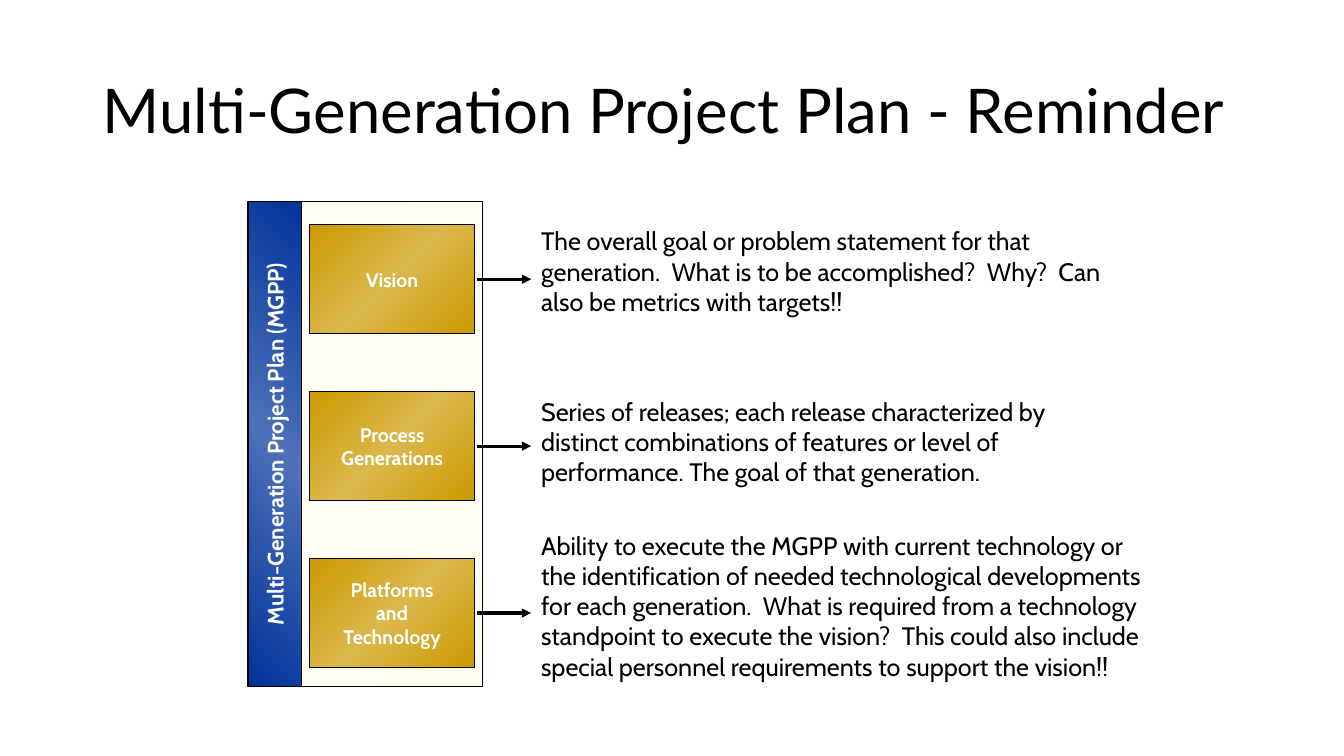
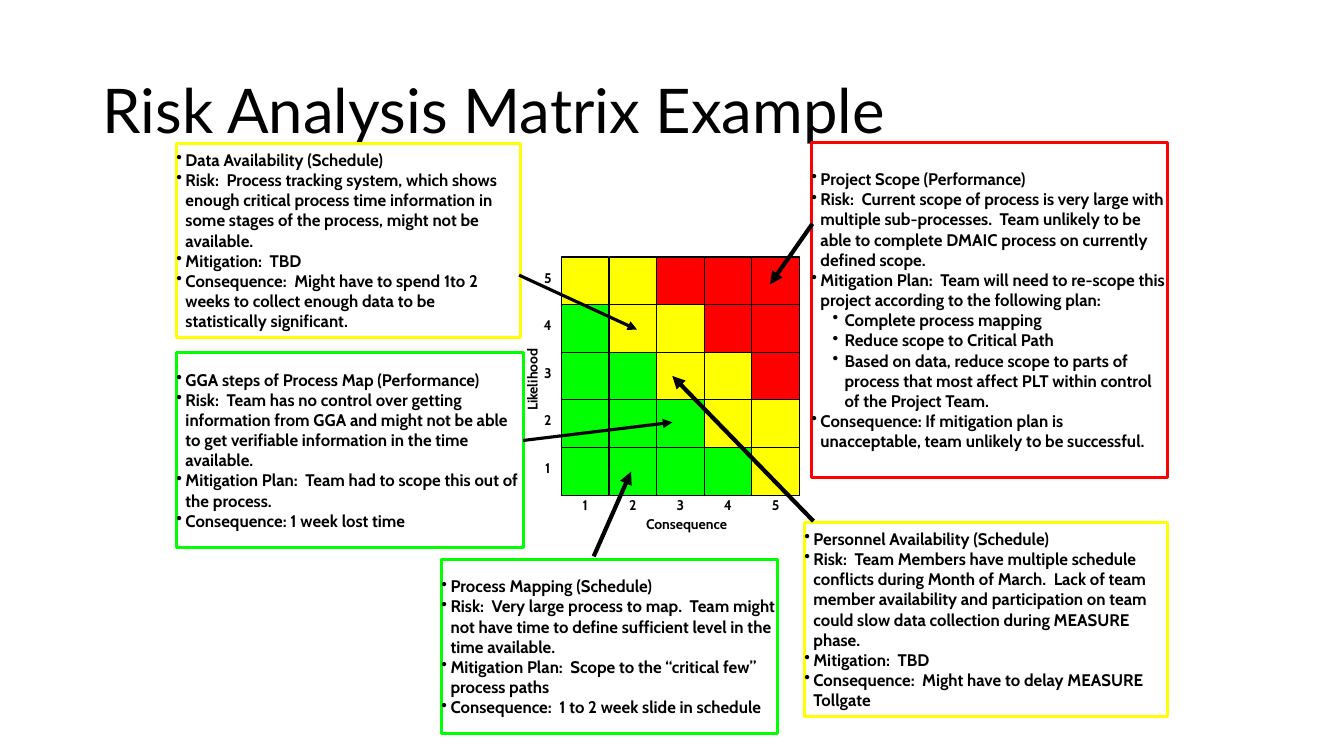
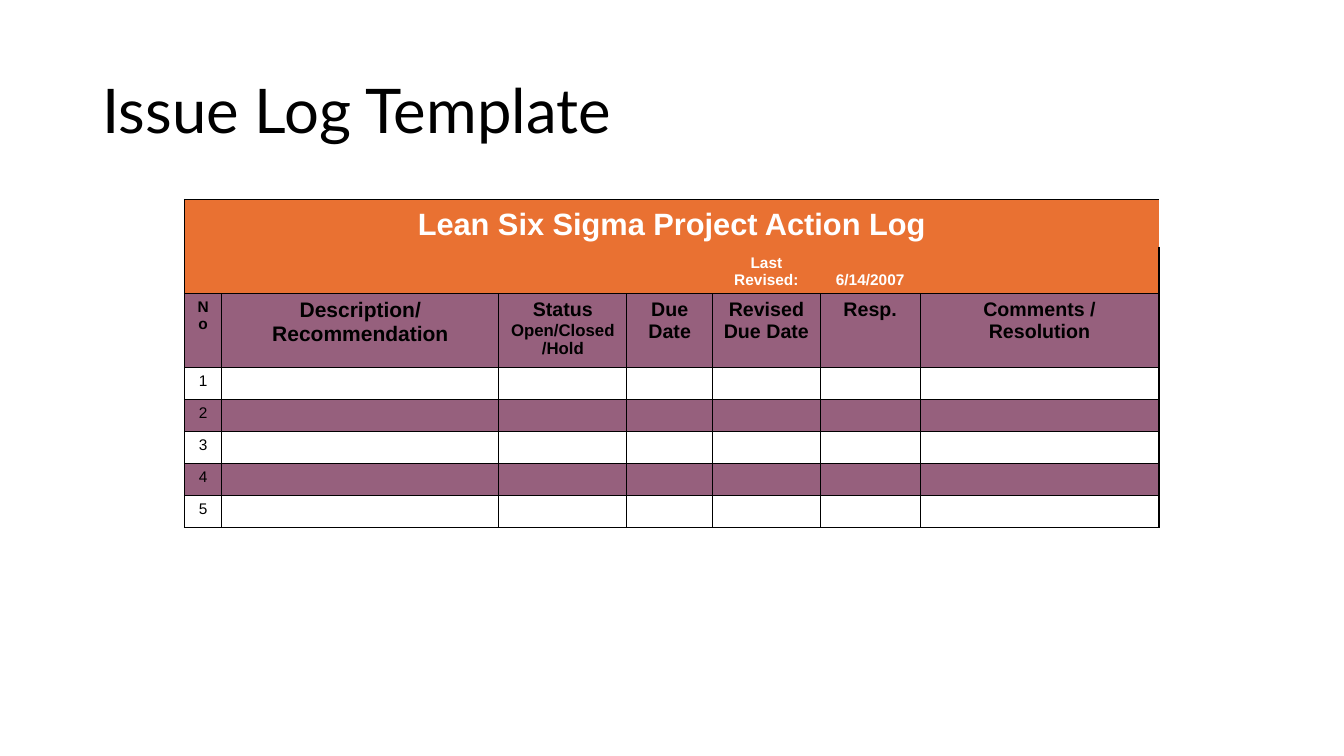
from dataclasses import dataclass, replace
from typing import Any, NamedTuple

from lxml.etree import SubElement
from pptx import Presentation
from pptx.dml.color import RGBColor
from pptx.enum.shapes import MSO_CONNECTOR, MSO_SHAPE
from pptx.enum.text import MSO_ANCHOR, PP_ALIGN
from pptx.oxml.ns import qn
from pptx.shapes.autoshape import Shape
from pptx.slide import Slide
from pptx.util import Emu, Inches, Pt

COLS, ROWS = 160, 90
WIDE, HIGH = Inches(13.333), Inches(7.5)


@dataclass(frozen=True)
class Style:
    """Look of a run of text."""
    size: float
    font: str = "Cabin"
    ink: str = "000000"
    bold: bool = False


@dataclass(frozen=True)
class Theme:
    """Colours and type sizes of the deck."""
    black: str = "000000"
    white: str = "FFFFFF"
    red: str = "FF0000"
    yellow: str = "FFFF00"
    green: str = "00FF00"
    orange: str = "E97132"
    plum: str = "96607D"
    cream: tuple[str, str] = ("FFFFEF", "FFFFF4")
    gold: tuple[str, str] = ("CC9900", "DBB84D")
    blue: tuple[str, str] = ("003399", "4D70B8")
    title: Style = Style(44, "Lato")
    body: Style = Style(18)
    card: Style = Style(14, ink="FFFFFF", bold=True)
    spine: Style = Style(16, ink="FFFFFF", bold=True)
    risk: Style = Style(12, bold=True)
    axis: Style = Style(10, bold=True)
    banner: Style = Style(22, "Arial", "FFFFFF", True)
    stamp: Style = Style(11, "Arial", "FFFFFF", True)
    head: Style = Style(14, "Arial", bold=True)
    count: Style = Style(11, "Arial")


THEME = Theme()


class Box(NamedTuple):
    """Area in grid columns and rows."""
    left: float
    top: float
    wide: float
    high: float


class Stage(NamedTuple):
    """Part of the plan with its meaning."""
    name: str
    note: str
    area: Box


class Item(NamedTuple):
    """Bullet line with its level."""
    text: str
    level: int = 0


class Risk(NamedTuple):
    """Framed risk and the arrow to its cell."""
    area: Box
    hue: str
    start: tuple[float, float]
    end: tuple[float, float]
    weight: float
    items: list[Item]


NOTE_LEFT = 63.24
STAGES = [
    Stage("Vision", "The overall goal or problem statement for that generation.  What is to be "
          "accomplished?  Why?  Can also be metrics with targets!!", Box(NOTE_LEFT, 26.28, 71.28, 12)),
    Stage("Process Generations", "Series of releases; each release characterized by distinct "
          "combinations of features or level of performance. The goal of that generation.",
          Box(NOTE_LEFT, 46.56, 69.96, 12)),
    Stage("Platforms\nand\nTechnology", "Ability to execute the MGPP with current technology or the "
          "identification of needed technological developments for each generation.  What is required "
          "from a technology standpoint to execute the vision?  This could also include special "
          "personnel requirements to support the vision!!", Box(NOTE_LEFT, 62.52, 75.84, 22.8)),
]
RISKS = [
    Risk(Box(52.56, 66.6, 39.96, 20.76), THEME.green, (70.68, 66.24), (75.12, 56.16), 3, [
        Item("Process Mapping (Schedule)"),
        Item("Risk:  Very large process to map.  Team might not have time to define sufficient "
             "level in the time available."),
        Item("Mitigation Plan:  Scope to the “critical few” process paths"),
        Item("Consequence:  1 to 2 week slide in schedule")]),
    Risk(Box(21, 17.04, 40.92, 23.16), THEME.yellow, (61.8, 32.76), (75.84, 39.24), 2.25, [
        Item("Data Availability (Schedule)"),
        Item("Risk:  Process tracking system, which shows enough critical process time information "
             "in some stages of the process, might not be available."),
        Item("Mitigation:  TBD"),
        Item("Consequence:  Might have to spend 1to 2 weeks to collect enough data to be "
             "statistically significant.")]),
    Risk(Box(95.76, 62.16, 43.2, 23.16), THEME.yellow, (96.84, 62.04), (80.04, 44.76), 3, [
        Item("Personnel Availability (Schedule)"),
        Item("Risk:  Team Members have multiple schedule conflicts during Month of March.  Lack of "
             "team member availability and participation on team could slow data collection during "
             "MEASURE phase."),
        Item("Mitigation:  TBD"),
        Item("Consequence:  Might have to delay MEASURE Tollgate")]),
    Risk(Box(21, 42, 41.28, 23.16), THEME.green, (62.28, 52.44), (80.04, 50.28), 2.25, [
        Item("GGA steps of Process Map (Performance)"),
        Item("Risk:  Team has no control over getting information from GGA and might not be able "
             "to get verifiable information in the time available."),
        Item("Mitigation Plan:  Team had to scope this out of the process."),
        Item("Consequence: 1 week lost time")]),
    Risk(Box(96.6, 16.92, 42.36, 39.96), THEME.red, (96.72, 26.64), (91.68, 33.84), 3, [
        Item("Project Scope (Performance)"),
        Item("Risk:  Current scope of process is very large with multiple sub-processes.  Team "
             "unlikely to be able to complete DMAIC process on currently defined scope."),
        Item("Mitigation Plan:  Team will need to re-scope this project according to the "
             "following plan:"),
        Item("Complete process mapping", 1),
        Item("Reduce scope to Critical Path", 1),
        Item("Based on data, reduce scope to parts of process that most affect PLT within control "
             "of the Project Team.", 1),
        Item("Consequence: If mitigation plan is unacceptable, team unlikely to be successful.")]),
]
HEAT = ["YYRRR", "GYYRR", "GGYYR", "GGGYY", "GGGGY"]
HUES = {"G": THEME.green, "Y": THEME.yellow, "R": THEME.red}
LOG_COLS = [4.44, 33, 15.24, 10.2, 12.84, 11.88, 28.44]
LOG_ROWS = [5.4, 5.14, 8.3] + [3.8] * 5
HEADS = [("No", 11), ("Description/ Recommendation", 15), ("Status ", 14), ("Due Date", 14),
         ("Revised Due Date", 14), ("Resp.", 14), ("Comments / Resolution", 14)]


def across(cols: float) -> Emu:
    """Turn grid columns into a length."""
    return Emu(round(cols * WIDE / COLS))


def down(rows: float) -> Emu:
    """Turn grid rows into a length."""
    return Emu(round(rows * HIGH / ROWS))


def place(box: Box) -> tuple[Emu, Emu, Emu, Emu]:
    """Turn a grid box into lengths."""
    return across(box.left), down(box.top), across(box.wide), down(box.high)


def apply(item: Any, values: dict[str, Any]) -> None:
    """Set each named attribute."""
    for name, value in values.items():
        setattr(item, name, value)


def write(para: Any, text: str, style: Style, **form: Any) -> None:
    """Add styled text to a paragraph."""
    apply(para, form)
    for index, line in enumerate(text.split("\n")):
        if index:
            para.add_line_break()
        run = para.add_run()
        run.text = line
        apply(run.font, {"size": Pt(style.size), "name": style.font, "bold": style.bold})
        run.font.color.rgb = RGBColor.from_string(style.ink)


def label(slide: Slide, box: Box, text: str, style: Style, anchor: Any = MSO_ANCHOR.TOP,
          wrap: bool = True, **form: Any) -> Shape:
    """Draw a text box."""
    shape = slide.shapes.add_textbox(*place(box))
    apply(shape.text_frame, {"word_wrap": wrap, "vertical_anchor": anchor})
    write(shape.text_frame.paragraphs[0], text, style, **form)
    return shape


def block(slide: Slide, box: Box, fill: str | tuple[str, str] | None = None,
          edge: str = THEME.black, weight: float = 1) -> Shape:
    """Draw a plain, shaded or hollow rectangle."""
    shape = slide.shapes.add_shape(MSO_SHAPE.RECTANGLE, *place(box))
    shape.shadow.inherit = False
    shape.line.color.rgb = RGBColor.from_string(edge)
    shape.line.width = Pt(weight)
    if isinstance(fill, str):
        shape.fill.solid()
        shape.fill.fore_color.rgb = RGBColor.from_string(fill)
        return shape
    shape.fill.background()
    if fill:
        shade(shape, *fill)
    return shape


def shade(shape: Shape, rim: str, core: str) -> None:
    """Give a shape a diagonal three-stop gradient."""
    props = shape._element.spPr
    grad = SubElement(props, qn("a:gradFill"), rotWithShape="1")
    stops = SubElement(grad, qn("a:gsLst"))
    for pos, hue in ((0, rim), (50000, core), (100000, rim)):
        stop = SubElement(stops, qn("a:gs"), pos=str(pos))
        SubElement(stop, qn("a:srgbClr"), val=hue)
    SubElement(grad, qn("a:lin"), ang="2700000", scaled="0")
    props.replace(props.find(qn("a:noFill")), grad)


def panel(slide: Slide, box: Box, fill: tuple[str, str], text: str, style: Style) -> Shape:
    """Draw a shaded block with centred text."""
    shape = block(slide, box, fill)
    inset = Inches(0.01)
    apply(shape.text_frame, {"word_wrap": True, "vertical_anchor": MSO_ANCHOR.MIDDLE,
                             "margin_left": inset, "margin_right": inset,
                             "margin_top": inset, "margin_bottom": inset})
    write(shape.text_frame.paragraphs[0], text, style, alignment=PP_ALIGN.CENTER)
    return shape


def arrow(slide: Slide, start: tuple[float, float], end: tuple[float, float],
          weight: float = 2.25) -> None:
    """Draw a straight arrow."""
    line = slide.shapes.add_connector(MSO_CONNECTOR.STRAIGHT, across(start[0]), down(start[1]),
                                      across(end[0]), down(end[1]))
    line.line.color.rgb = RGBColor.from_string(THEME.black)
    line.line.width = Pt(weight)
    SubElement(line.line._get_or_add_ln(), qn("a:tailEnd"), type="triangle")
    SubElement(line._element.spPr, qn("a:effectLst"))


def start(deck: Any, title: str) -> Slide:
    """Add a blank slide with the shared title."""
    slide = deck.slides.add_slide(deck.slide_layouts[6])
    label(slide, Box(11.04, 4.8, 138, 17.4), title, THEME.title, MSO_ANCHOR.MIDDLE, line_spacing=0.9)
    return slide


def plan(deck: Any) -> None:
    """Build the plan slide."""
    slide = start(deck, "Multi-Generation Project Plan - Reminder")
    block(slide, Box(35.88, 24, 21.6, 57.72), THEME.cream)
    for index, stage in enumerate(STAGES):
        card = Box(36.84, 26.76 + 19.87 * index, 19.68, 12.96)
        panel(slide, card, THEME.gold, stage.name, THEME.card)
        label(slide, stage.area, stage.note, THEME.body)
        middle = card.top + card.high / 2
        arrow(slide, (56.76, middle), (NOTE_LEFT, middle))
    spine = panel(slide, Box(3.84, 49.68, 57.72, 6.36), THEME.blue,
                  "Multi-Generation Project Plan (MGPP)", THEME.spine)
    spine.rotation = 270


def frame(slide: Slide, risk: Risk) -> None:
    """Draw a framed list of bullets."""
    shape = block(slide, risk.area, edge=risk.hue, weight=2.25)
    text = shape.text_frame
    apply(text, {"word_wrap": True, "vertical_anchor": MSO_ANCHOR.MIDDLE,
                 "margin_left": 0, "margin_right": 0})
    for index, item in enumerate(risk.items):
        para = text.add_paragraph() if index else text.paragraphs[0]
        write(para, item.text, THEME.risk, alignment=PP_ALIGN.LEFT, level=item.level)
        margin, hang = ((0.09, 0.09), (0.33, 0.12))[item.level]
        props = para._p.get_or_add_pPr()
        props.set("marL", str(Inches(margin)))
        props.set("indent", str(-Inches(hang)))
        SubElement(props, qn("a:buChar"), char="•")


def matrix(deck: Any) -> None:
    """Build the risk matrix slide."""
    slide = start(deck, "Risk Analysis Matrix Example")
    left, top, side, nudge = 66.84, 30.6, 5.67, 0.84
    label(slide, Box(75, 60.84, 13.44, 3.24), "Consequence", THEME.axis, alignment=PP_ALIGN.CENTER)
    label(slide, Box(57.84, 42.96, 11.04, 3.24), "Likelihood", THEME.axis).rotation = 270
    for risk in RISKS:
        frame(slide, risk)
    for row, line in enumerate(HEAT):
        for col, key in enumerate(line):
            block(slide, Box(left + side * col, top + side * row, side, side), HUES[key], weight=0.75)
    for step in range(len(HEAT)):
        marks = ((Box(63.24, top + nudge + side * step, 3.96, 3.24), len(HEAT) - step),
                 (Box(left + nudge + side * step, 58.56, 3.96, 3.24), step + 1))
        for box, mark in marks:
            label(slide, box, str(mark), THEME.axis, wrap=False, alignment=PP_ALIGN.CENTER)
    for risk in RISKS:
        arrow(slide, risk.start, risk.end, risk.weight)


def border(cell: Any, row: int, col: int) -> None:
    """Line a cell, leaving the two banner rows open inside."""
    sides = {"L": row > 1 or col == 0, "R": row > 1 or col == len(LOG_COLS) - 1,
             "T": row != 1, "B": row != 0}
    props = cell._tc.get_or_add_tcPr()
    for side, drawn in sides.items():
        line = SubElement(props, qn(f"a:ln{side}"), w=str(Pt(1)))
        if drawn:
            SubElement(SubElement(line, qn("a:solidFill")), qn("a:srgbClr"), val=THEME.black)
        else:
            SubElement(line, qn("a:noFill"))


def issues(deck: Any) -> None:
    """Build the issue log slide."""
    slide = start(deck, "Issue Log Template")
    area = Box(21.96, 23.76, sum(LOG_COLS), sum(LOG_ROWS))
    table = slide.shapes.add_table(len(LOG_ROWS), len(LOG_COLS), *place(area)).table
    apply(table, {"first_row": False, "horz_banding": False})
    for col, wide in enumerate(LOG_COLS):
        table.columns[col].width = across(wide)
    texts = {(0, 0): ("Lean Six Sigma Project Action Log", THEME.banner),
             (1, 4): ("Last Revised:", THEME.stamp), (1, 5): ("6/14/2007", THEME.stamp)}
    for col, (text, size) in enumerate(HEADS):
        texts[2, col] = (text, replace(THEME.head, size=size))
    for row in range(3, len(LOG_ROWS)):
        texts[row, 0] = (str(row - 2), THEME.count)
    for row, high in enumerate(LOG_ROWS):
        table.rows[row].height = down(high)
        hue = THEME.orange if row < 2 else THEME.white if row % 2 else THEME.plum
        for col in range(len(LOG_COLS)):
            cell = table.cell(row, col)
            border(cell, row, col)
            cell.fill.solid()
            cell.fill.fore_color.rgb = RGBColor.from_string(hue)
            cell.vertical_anchor = MSO_ANCHOR.BOTTOM if row < 2 else MSO_ANCHOR.TOP
            para = cell.text_frame.paragraphs[0]
            if (row, col) in texts:
                write(para, *texts[row, col], alignment=PP_ALIGN.CENTER)
            else:
                SubElement(para._p, qn("a:endParaRPr"), sz=str(THEME.count.size * 100))
    write(table.cell(2, 2).text_frame.paragraphs[0], "Open/Closed/Hold", replace(THEME.head, size=12))
    table.cell(0, 0).merge(table.cell(0, len(LOG_COLS) - 1))


def main() -> None:
    """Build and save the deck."""
    deck = Presentation()
    apply(deck, {"slide_width": WIDE, "slide_height": HIGH})
    for build in (plan, matrix, issues):
        build(deck)
    deck.save("out.pptx")


if __name__ == "__main__":
    main()
